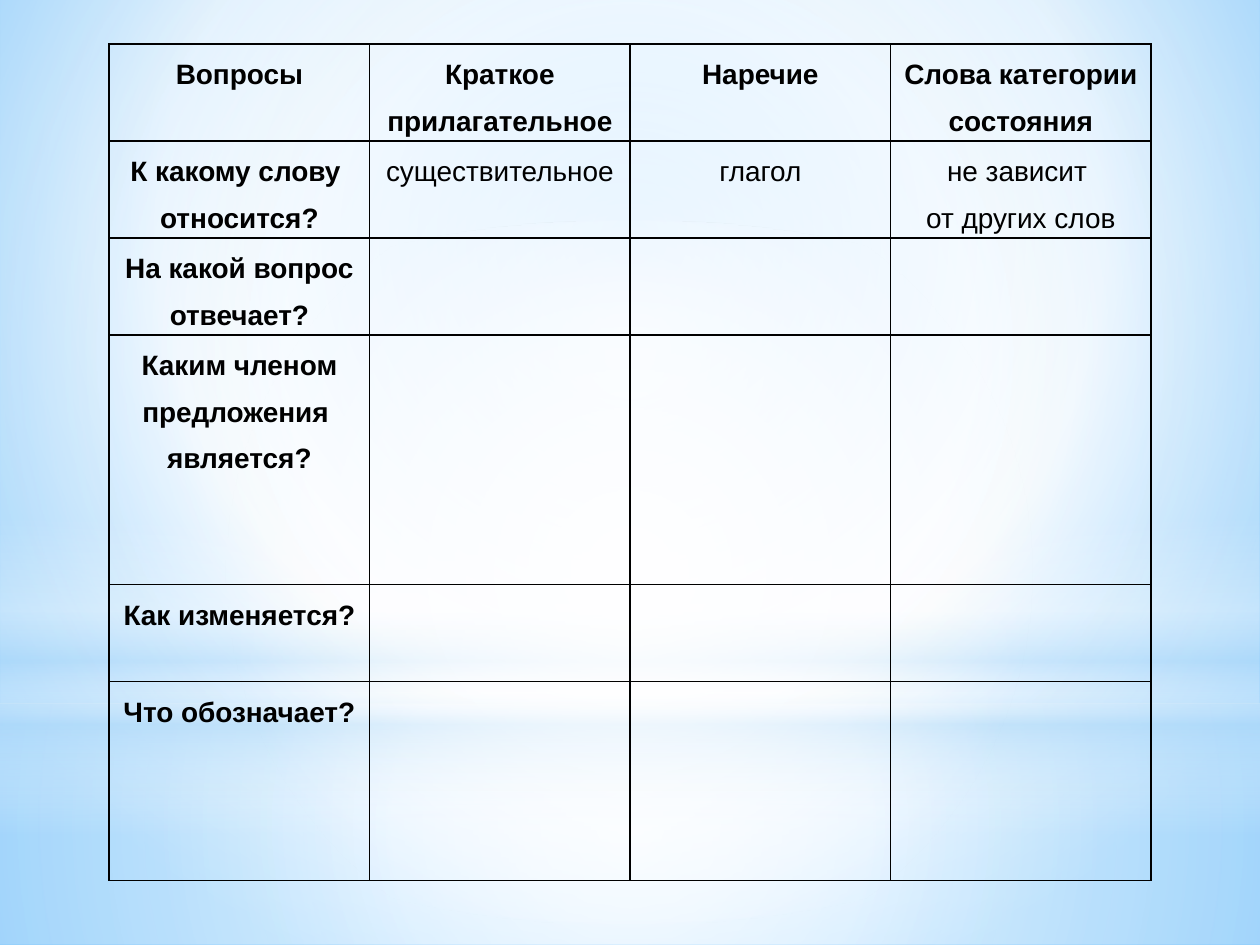
import pptx
import pptx.dml.color
import pptx.enum.shapes
import pptx.enum.text
import pptx.oxml
import pptx.oxml.ns
import pptx.util
from lxml import etree

Pt = pptx.util.Pt
qn = pptx.oxml.ns.qn
SHAPE = pptx.enum.shapes.MSO_SHAPE
WIDTH, HEIGHT = 720, 540
CENTER = (50, 50, 50, 50)

ROWS = [
    ["Вопросы", "Краткое\nприлагательное", "Наречие", "Слова категории состояния"],
    ["К какому слову \nотносится?", "существительное", "глагол", "не зависит \nот других слов"],
    ["На какой вопрос отвечает?"],
    ["Каким членом предложения \nявляется?"],
    ["Как изменяется?"],
    ["Что обозначает?"],
]
ROW_HEIGHTS = [55.4, 55.4, 55.4, 142.6, 55.4, 113.8]


def color(value):
    return pptx.dml.color.RGBColor.from_string(value)


def add_node(parent, tag, **attributes):
    node = etree.SubElement(parent, qn(tag))
    for name, value in attributes.items():
        node.set(name, str(value))
    return node


def set_gradient(fill, element, stops, center=None, angle=None):
    """Stops are (position %, colour, opacity %); a center makes it circular."""
    fill.gradient()
    gradient = element.find(".//" + qn("a:gradFill"))
    for child in list(gradient):
        gradient.remove(child)
    stop_list = add_node(gradient, "a:gsLst")
    for position, value, opacity in stops:
        stop = add_node(stop_list, "a:gs", pos=position * 1000)
        tone = add_node(stop, "a:srgbClr", val=value)
        if opacity < 100:
            add_node(tone, "a:alpha", val=opacity * 1000)
    if center:
        circle = add_node(gradient, "a:path", path="circle")
        sides = {side: share * 1000 for side, share in zip("ltrb", center)}
        add_node(circle, "a:fillToRect", **sides)
    else:
        add_node(gradient, "a:lin", ang=angle * 60000, scaled=0)


def add_glow(slide, kind, top, height, stops, **direction):
    shape = slide.shapes.add_shape(kind, 0, Pt(top), Pt(WIDTH), Pt(height))
    shape.shadow.inherit = False
    shape.line.fill.background()
    set_gradient(shape.fill, shape._element, stops, **direction)


def add_backdrop(slide):
    set_gradient(slide.background.fill, slide._element,
                 [(0, "9ED5FF", 100), (60, "FFFFFF", 100), (100, "5BB9FF", 100)],
                 center=(20, 10, 20, 60))
    # Ground and sky
    horizon = 401.8
    add_glow(slide, SHAPE.RECTANGLE, horizon, HEIGHT - horizon,
             [(0, "FFFFFF", 91), (37, "FFFFFF", 76), (100, "B4DCFA", 79)], center=CENTER)
    add_glow(slide, SHAPE.RECTANGLE, 0, horizon,
             [(0, "FFFFFF", 89), (48, "FFFFFF", 62), (100, "B4DCFA", 79)], center=CENTER)
    # Haze bands along the horizon
    add_glow(slide, SHAPE.RECTANGLE, 296.6, 180,
             [(0, "FFFFFF", 0), (29, "FFFFFF", 30), (45, "B4DCFA", 40),
              (55, "FFFFFF", 26), (65, "B4DCFA", 60), (100, "FFFFFF", 0)], angle=90)
    # Central light
    add_glow(slide, SHAPE.OVAL, 126, horizon,
             [(0, "FFFFFF", 100), (56, "FFFFFF", 0)], center=CENTER)


def add_borders(cell, value="000000", width=1):
    properties = cell._tc.get_or_add_tcPr()
    for index, tag in enumerate(("a:lnL", "a:lnR", "a:lnT", "a:lnB")):
        line = add_node(properties, tag, w=Pt(width))
        add_node(add_node(line, "a:solidFill"), "a:srgbClr", val=value)
        properties.insert(index, line)


def fill_cell(cell, text, bold):
    cell.margin_left = cell.margin_right = Pt(4.5)
    cell.margin_top = cell.margin_bottom = 0
    cell.text_frame.text = text
    for paragraph in cell.text_frame.paragraphs:
        paragraph.alignment = pptx.enum.text.PP_ALIGN.CENTER
        paragraph.line_spacing = 1.5
        for run in paragraph.runs:
            run.font.name = "Arial"
            run.font.size = Pt(16)
            run.font.bold = bold
            run.font.color.rgb = color("000000")


def add_comparison_table(slide, left, top, width):
    columns = len(ROWS[0])
    table = slide.shapes.add_table(len(ROWS), columns, Pt(left), Pt(top),
                                   Pt(width), Pt(sum(ROW_HEIGHTS))).table
    table.first_row = table.horz_banding = False
    for column in table.columns:
        column.width = Pt(width / columns)
    for row_index, (texts, height) in enumerate(zip(ROWS, ROW_HEIGHTS)):
        table.rows[row_index].height = Pt(height)
        for column_index in range(columns):
            cell = table.cell(row_index, column_index)
            cell.fill.background()
            add_borders(cell)
            if column_index < len(texts):
                # Headings fill the first row and the first column
                fill_cell(cell, texts[column_index], row_index == 0 or column_index == 0)


def main():
    presentation = pptx.Presentation()
    presentation.slide_width, presentation.slide_height = Pt(WIDTH), Pt(HEIGHT)
    slide = presentation.slides.add_slide(presentation.slide_layouts[6])
    add_backdrop(slide)
    add_comparison_table(slide, left=62.4, top=25.2, width=595.4)
    presentation.save("out.pptx")


if __name__ == "__main__":
    main()
